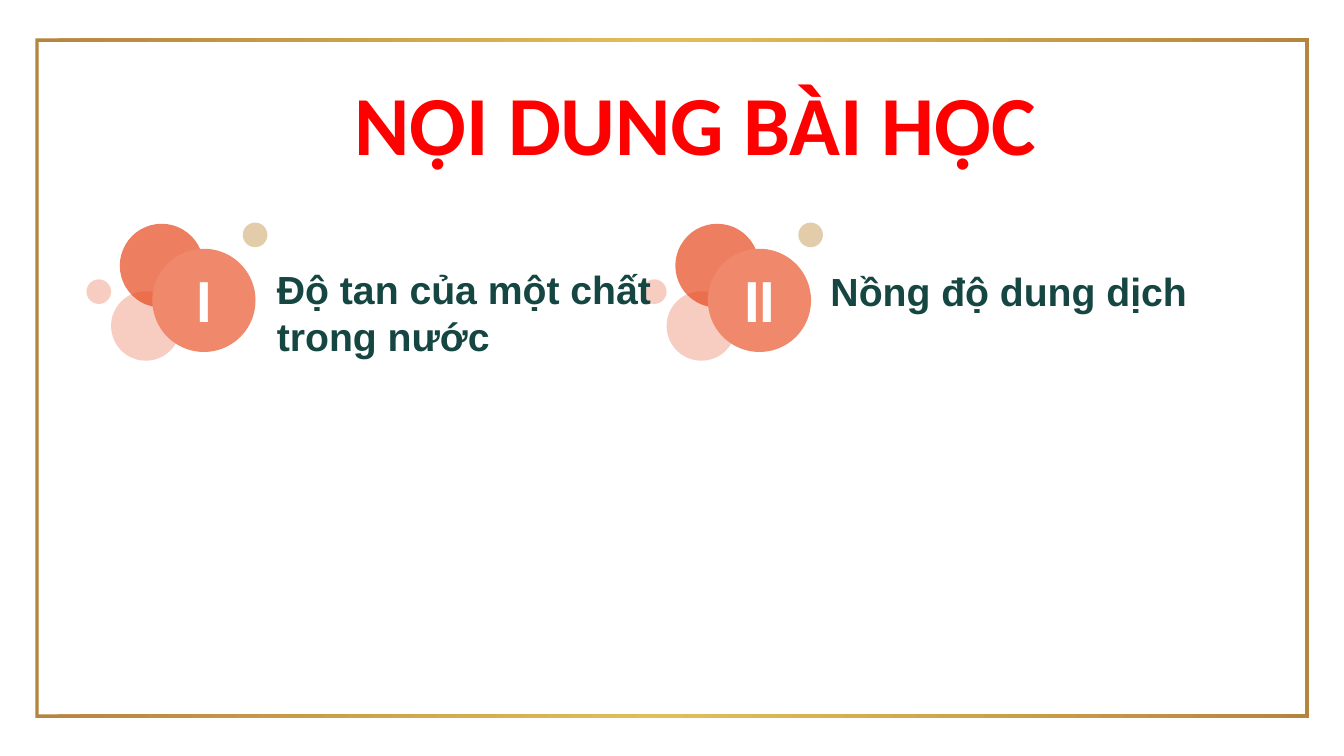
from copy import deepcopy
from typing import NamedTuple

from lxml.etree import SubElement
from pptx import Presentation
from pptx.dml.color import RGBColor as RGB
from pptx.enum.shapes import MSO_SHAPE as SHAPE
from pptx.enum.text import MSO_ANCHOR as ANCHOR, MSO_AUTO_SIZE as AUTO, PP_ALIGN as ALIGN
from pptx.oxml.ns import qn
from pptx.util import Cm, Pt

COLORS = {
    "gold": "B5853D", "light_gold": "E2BE5A", "red": "FF0000",
    "pale": "F6B8A7", "orange": "E7481D", "coral": "F0886C",
    "sand": "D6B787", "white": "FFFFFF", "teal": "154642",
}


class Bubble(NamedTuple):
    x: float
    y: float
    size: float
    color: str
    numbered: bool = False


class Label(NamedTuple):
    x: float
    y: float
    w: float
    h: float
    lines: list[str]
    size: int
    font: str
    color: str
    align: ALIGN = ALIGN.LEFT


BUBBLES = [
    Bubble(2.8, 7.34, 1.75, "pale"),
    Bubble(3.02, 5.64, 2.11, "orange"),
    Bubble(3.84, 6.27, 2.6, "coral", True),
    Bubble(2.18, 7.04, 0.62, "pale"),
    Bubble(6.12, 5.61, 0.62, "sand"),
]
NUMERALS = ["I", "II"]
CLUSTER_PITCH = 14
LABELS = [
    Label(8.59, 1.68, 17.88, 2.82, ["NỘI DUNG BÀI HỌC"], 60, "Calibri", "red", ALIGN.CENTER),
    Label(6.73, 6.55, 10.34, 2.64, ["Độ tan của một chất", "trong nước"], 28, "Arial", "teal"),
    Label(20.68, 6.6, 9.6, 1.45, ["Nồng độ dung dịch"], 28, "Arial", "teal"),
]


def rgb(name: str) -> RGB:
    return RGB.from_string(COLORS[name])


def write(tf, lines: list[str], size: int, font: str, color: str, align: ALIGN) -> None:
    tf.word_wrap = False
    for i, line in enumerate(lines):
        p = tf.add_paragraph() if i else tf.paragraphs[0]
        p.alignment = align
        r = p.add_run()
        r.text = line
        r.font.size, r.font.name, r.font.bold = Pt(size), font, True
        r.font.color.rgb = rgb(color)


def draw_frame(s) -> None:
    sp = s.shapes.add_shape(SHAPE.FRAME, Cm(0.89), Cm(0.97), Cm(32.1), Cm(17.12))
    sp.shadow.inherit = False
    sp.adjustments[0] = 0.005
    sp.line.fill.background()
    sp.fill.gradient()
    sp.fill.gradient_angle = 0
    for stop in sp.fill.gradient_stops:
        stop.color.rgb = rgb("gold")
    first = next(sp._element.spPr.iter(qn("a:gs")))
    middle = deepcopy(first)
    middle.set("pos", "49000")
    middle.find(qn("a:srgbClr")).set("val", COLORS["light_gold"])
    first.addnext(middle)


def draw_cluster(s, dx: float, numeral: str) -> None:
    group = s.shapes.add_group_shape()
    for b in BUBBLES:
        sp = group.shapes.add_shape(
            SHAPE.OVAL, Cm(b.x + dx), Cm(b.y), Cm(b.size), Cm(b.size))
        sp.shadow.inherit = False
        sp.line.fill.background()
        sp.fill.solid()
        sp.fill.fore_color.rgb = rgb(b.color)
        if b.numbered:
            tf = sp.text_frame
            tf.margin_left = tf.margin_right = tf.margin_top = tf.margin_bottom = 0
            tf.vertical_anchor = ANCHOR.MIDDLE
            write(tf, [numeral], 40, "Roboto Condensed", "white", ALIGN.CENTER)
        else:
            clr = next(sp._element.spPr.iter(qn("a:srgbClr")))
            SubElement(clr, qn("a:alpha")).set("val", "70000")


def draw_label(s, label: Label) -> None:
    box = s.shapes.add_textbox(Cm(label.x), Cm(label.y), Cm(label.w), Cm(label.h))
    write(box.text_frame, label.lines, label.size, label.font, label.color, label.align)
    box.text_frame.auto_size = AUTO.SHAPE_TO_FIT_TEXT


def main() -> None:
    prs = Presentation()
    prs.slide_width, prs.slide_height = Cm(33.87), Cm(19.05)
    s = prs.slides.add_slide(prs.slide_layouts[6])
    draw_frame(s)
    for i, numeral in enumerate(NUMERALS):
        draw_cluster(s, i * CLUSTER_PITCH, numeral)
    for label in LABELS:
        draw_label(s, label)
    prs.save("out.pptx")


if __name__ == "__main__":
    main()
